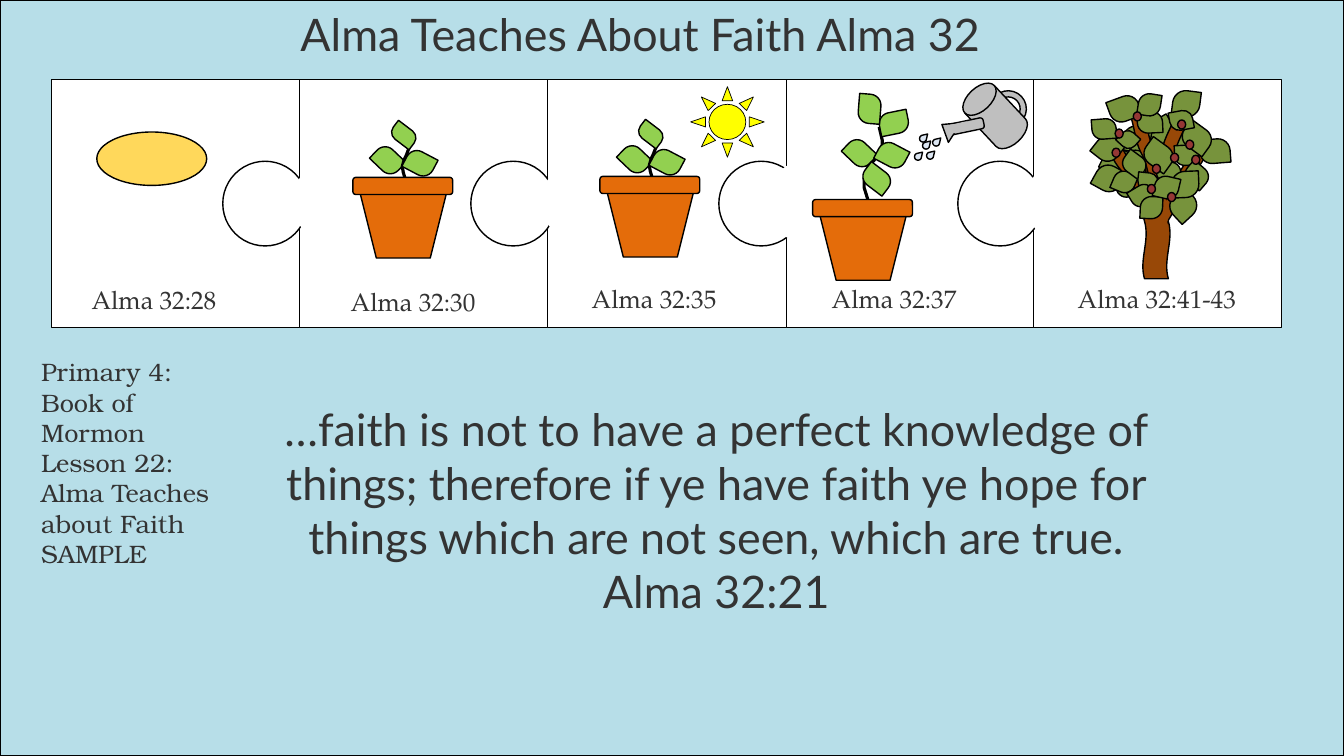
import pptx
import pptx.util
import pptx.dml.color
import pptx.enum.shapes
import pptx.enum.text

KIND = pptx.enum.shapes.MSO_SHAPE
ALIGN = pptx.enum.text.PP_ALIGN
FIT = pptx.enum.text.MSO_AUTO_SIZE
LEAF = KIND.ROUND_2_DIAG_RECTANGLE
inch = pptx.util.Inches

SKY, WHITE, BLACK, INK = "B7DEE8", "FFFFFF", "000000", "333333"
GREEN, OLIVE, BARK, BERRY = "92D050", "77933C", "984807", "953735"
CLAY, STEEL, WATER = "E46C0A", "BFBFBF", "DCE6F2"
SERIF = "TeX Gyre Pagella"

# Puzzle panels: left edge, caption, caption offset
SIDE, TOP, KNOB = 2.46, 0.79, 0.84
PANELS = [
    (0.51, "Alma 32:28", (0.3, 1.98)),
    (2.97, "Alma 32:30", (0.41, 2)),
    (5.43, "Alma 32:35", (0.34, 1.97)),
    (7.8, "Alma 32:37", (0.35, 1.97)),
    (10.25, "Alma 32:41-43", (0.34, 1.97)),
]
SOCKETS = [2.91, 5.38, 7.62, 10.18]

# Plants, measured from the top left of the pot rim: x, y, w, h, turn
YOUNG = [(0.2, -0.28, 0.29, 0.22, 43.7), (0.52, -0.25, 0.29, 0.22, 27.8),
         (0.42, -0.55, 0.17, 0.26, 307.3)]
YOUNG_STEM = [(0.53, 0.13), (0.54, 0.1), (0.53, 0.05), (0.5, -0.05),
              (0.49, -0.11), (0.51, -0.18), (0.53, -0.22), (0.56, -0.3),
              (0.56, -0.34), (0.54, -0.42)]
TALL = [(0.32, -0.57, 0.29, 0.22, 43.7), (0.64, -0.55, 0.29, 0.22, 27.8),
        (0.53, -0.35, 0.21, 0.29, 307.3), (0.66, -0.87, 0.29, 0.22, 348.6),
        (0.42, -1.01, 0.29, 0.22, 274.6)]
TALL_STEM = [(0.54, 0.17), (0.56, 0.11), (0.56, 0.04), (0.51, -0.12),
             (0.51, -0.21), (0.55, -0.33), (0.61, -0.39), (0.65, -0.46),
             (0.69, -0.53), (0.69, -0.59), (0.66, -0.72)]

# Tree, measured from the top left of its crown
BACK = [
    (0.78, 0.41, 0.24, 0.3, 85.5), (0.58, 0.28, 0.27, 0.26, 329.9),
    (0.34, 0.35, 0.27, 0.26, 10.4), (0.35, 0.59, 0.22, 0.22, 15.3),
    (0.14, 0.57, 0.27, 0.26, 26.4), (0.06, 0.74, 0.27, 0.26, 28.9),
    (0.29, 0.83, 0.2, 0.24, 71.7),
]
WOOD = [
    (0.1, 1.16, 1.14, 0.27, 270), (-0.08, 0.7, 0.95, 0.15, 235.5),
    (0.44, 0.86, 0.95, 0.15, 298.7), (0.31, 0.55, 0.95, 0.15, 289.4),
    (0.11, 0.53, 0.95, 0.15, 252.4),
]
FRONT = [
    (0.06, 0.45, 0.25, 0.25, 38.2), (0.83, 0, 0.27, 0.26, 187.3),
    (0.23, 0.03, 0.24, 0.3, 69.8), (0.3, 0.4, 0.18, 0.17, 42.2),
    (0.05, 0.26, 0.2, 0.24, 85.5), (0.5, 0.19, 0.21, 0.25, 87.1),
    (0.24, 0.8, 0.22, 0.21, 22.8), (0.35, 0.61, 0.2, 0.24, 126.4),
    (0.69, 0.69, 0.2, 0.24, 87.1), (0.57, 0.49, 0.24, 0.3, 126),
    (0.49, 0.03, 0.22, 0.22, 8.9), (0.87, 0.52, 0.2, 0.24, 87.1),
    (1.13, 0.45, 0.24, 0.3, 85.5), (0.95, 0.32, 0.24, 0.3, 126),
    (0.82, 0.18, 0.19, 0.23, 79.4), (0.97, 0.72, 0.2, 0.24, 130.9),
    (0.5, 0.8, 0.17, 0.2, 276.1), (0.43, 0.92, 0.2, 0.24, 238.6),
    (0.8, 1.01, 0.27, 0.26, 137.2), (0.82, 0.8, 0.27, 0.26, 177.7),
    (0.51, 1.05, 0.22, 0.22, 182.6), (0.65, 0.85, 0.24, 0.22, 193.2),
]
FRUIT = [(0.23, 0.57), (1.02, 0.64), (0.96, 0.49), (0.26, 0.38),
         (0.44, 0.21), (0.88, 0.29), (0.63, 0.73), (0.81, 0.62),
         (0.58, 0.93), (0.78, 1.01)]

# Drops, measured from the top left of the can
DROPS = [(0.08, 0.6), (0.18, 0.57), (0.05, 0.53), (0, 0.71), (0.12, 0.7)]


def tint(code):
    return pptx.dml.color.RGBColor.from_string(code)


def draw(parts, kind, x, y, w, h, turn=0, fill=WHITE, line=BLACK, width=1, adj=()):
    shape = parts.add_shape(kind, inch(x), inch(y), inch(w), inch(h))
    shape.shadow.inherit = False
    shape.rotation = turn
    shape.fill.solid()
    shape.fill.fore_color.rgb = tint(fill)
    if line:
        shape.line.color.rgb = tint(line)
        shape.line.width = pptx.util.Pt(width)
    else:
        shape.line.fill.background()
    for spot, value in enumerate(adj):
        shape.adjustments[spot] = value
    return shape


def write(shape, *lines, size=18, font=SERIF, align=ALIGN.LEFT, wrap=False):
    frame = shape.text_frame
    frame.word_wrap = wrap
    frame.auto_size = FIT.SHAPE_TO_FIT_TEXT
    for spot, line in enumerate(lines):
        para = frame.paragraphs[0] if spot == 0 else frame.add_paragraph()
        para.alignment = align
        run = para.add_run()
        run.text = line
        run.font.size = pptx.util.Pt(size)
        run.font.name = font
        run.font.color.rgb = tint(INK)


def label(parts, x, y, w, h, *lines, **style):
    write(parts.add_textbox(inch(x), inch(y), inch(w), inch(h)), *lines, **style)


def leaves(parts, x, y, rows, fill):
    for dx, dy, w, h, turn in rows:
        draw(parts, LEAF, x + dx, y + dy, w, h, turn, fill, adj=(0.5, 0))


def board(slide):
    parts = slide.shapes.add_group_shape().shapes
    for left, *_ in PANELS:
        draw(parts, KIND.RECTANGLE, left, TOP, SIDE, SIDE)
    for left, *_ in PANELS[:-1]:
        draw(parts, KIND.OVAL, left + 1.7, TOP + 0.81, KNOB, KNOB)
    # White circles open the seams
    for left in SOCKETS:
        draw(parts, KIND.OVAL, left, TOP + 0.79, KNOB, KNOB, line=WHITE)
    for left, text, (dx, dy) in PANELS:
        wide = 1.48 if len(text) < 12 else 1.84
        label(slide.shapes, left + dx, TOP + dy, wide, 0.4, text)


def plant(slide, x, y, rows, stem):
    parts = slide.shapes.add_group_shape().shapes
    leaves(parts, x, y, rows[:1], GREEN)
    spots = [(inch(x + dx), inch(y + dy)) for dx, dy in stem]
    pen = parts.build_freeform(*spots[0])
    pen.add_line_segments(spots[1:], close=False)
    stalk = pen.convert_to_shape()
    stalk.shadow.inherit = False
    stalk.fill.background()
    stalk.line.color.rgb = tint(BLACK)
    stalk.line.width = pptx.util.Pt(2.25)
    leaves(parts, x, y, rows[1:2], GREEN)
    # Pot and rim
    draw(parts, KIND.TRAPEZOID, x + 0.04, y + 0.03, 0.92, 0.77, 180, CLAY)
    draw(parts, KIND.ROUNDED_RECTANGLE, x, y, 0.99, 0.17, fill=CLAY)
    leaves(parts, x, y, rows[2:], GREEN)


def can(slide, x, y):
    parts = slide.shapes.add_group_shape().shapes
    tube = KIND.ROUNDED_RECTANGLE
    draw(parts, KIND.DONUT, x + 0.75, y + 0.09, 0.36, 0.36, 316.9, STEEL, adj=(0.17,))
    draw(parts, KIND.FLOWCHART_MAGNETIC_DISK, x + 0.6, y, 0.4, 0.68, 316.9, STEEL)
    draw(parts, tube, x + 0.45, y + 0.26, 0.11, 0.37, 258.2, STEEL, adj=(0.26,))
    draw(parts, KIND.ISOSCELES_TRIANGLE, x + 0.22, y + 0.39, 0.23, 0.15, 302.6, STEEL)
    draw(parts, tube, x + 0.4, y + 0.36, 0.09, 0.19, 258.2, STEEL, None, adj=(0.26,))
    for dx, dy in DROPS:
        draw(parts, KIND.TEAR, x + dx, y + dy, 0.07, 0.07, fill=WATER, adj=(1.29,))


def tree(slide, x, y):
    parts = slide.shapes.add_group_shape().shapes
    leaves(parts, x, y, BACK, OLIVE)
    for dx, dy, w, h, turn in WOOD:
        draw(parts, KIND.DOUBLE_WAVE, x + dx, y + dy, w, h, turn, BARK)
    draw(parts, KIND.OVAL, x + 0.59, y + 0.91, 0.19, 0.67, fill=BARK, line=None)
    leaves(parts, x, y, FRONT, OLIVE)
    for dx, dy in FRUIT:
        draw(parts, KIND.OVAL, x + dx, y + dy, 0.08, 0.09, fill=BERRY)


def head(slide, x, y, w, h):
    title = slide.shapes.title
    title.left, title.top, title.width, title.height = map(inch, (x, y, w, h))
    title.text_frame.vertical_anchor = pptx.enum.text.MSO_ANCHOR.TOP
    write(title, "Alma Teaches About Faith Alma 32", size=32, font="Lato")
    # Bring the title in front of the backdrop
    title.element.getparent().append(title.element)


def main():
    deck = pptx.Presentation()
    deck.slide_width, deck.slide_height = inch(13.33), inch(7.5)
    slide = deck.slides.add_slide(deck.slide_layouts[5])
    draw(slide.shapes, KIND.RECTANGLE, 0, 0, 13.33, 7.5, fill=SKY)
    board(slide)

    # Seed, seedling, sun, watering, tree
    draw(slide.shapes, KIND.OVAL, 0.96, 1.31, 1.09, 0.53, fill="FFD85B")
    plant(slide, 3.5, 1.76, YOUNG, YOUNG_STEM)
    plant(slide, 5.95, 1.75, YOUNG, YOUNG_STEM)
    draw(slide.shapes, KIND.SUN, 6.85, 0.86, 0.73, 0.7, fill="FFFF00", width=0.5)
    can(slide, 9.07, 0.81)
    tree(slide, 10.8, 0.9)
    plant(slide, 8.06, 1.98, TALL, TALL_STEM)

    # Title, verse and lesson note
    head(slide, 2.88, 0.02, 7.79, 0.64)
    label(slide.shapes, 2.63, 3.94, 8.95, 2.79,
          "…faith is not to have a perfect knowledge of things; therefore if ye "
          "have faith ye hope for things which are not seen, which are true.",
          "Alma 32:21", size=32, font="Lato", align=ALIGN.CENTER, wrap=True)
    label(slide.shapes, 0.31, 3.49, 1.9, 2.22,
          "Primary 4: Book of Mormon Lesson 22: Alma Teaches about Faith",
          "SAMPLE", font="TeX Gyre Bonum", wrap=True)
    deck.save("out.pptx")


if __name__ == "__main__":
    main()
